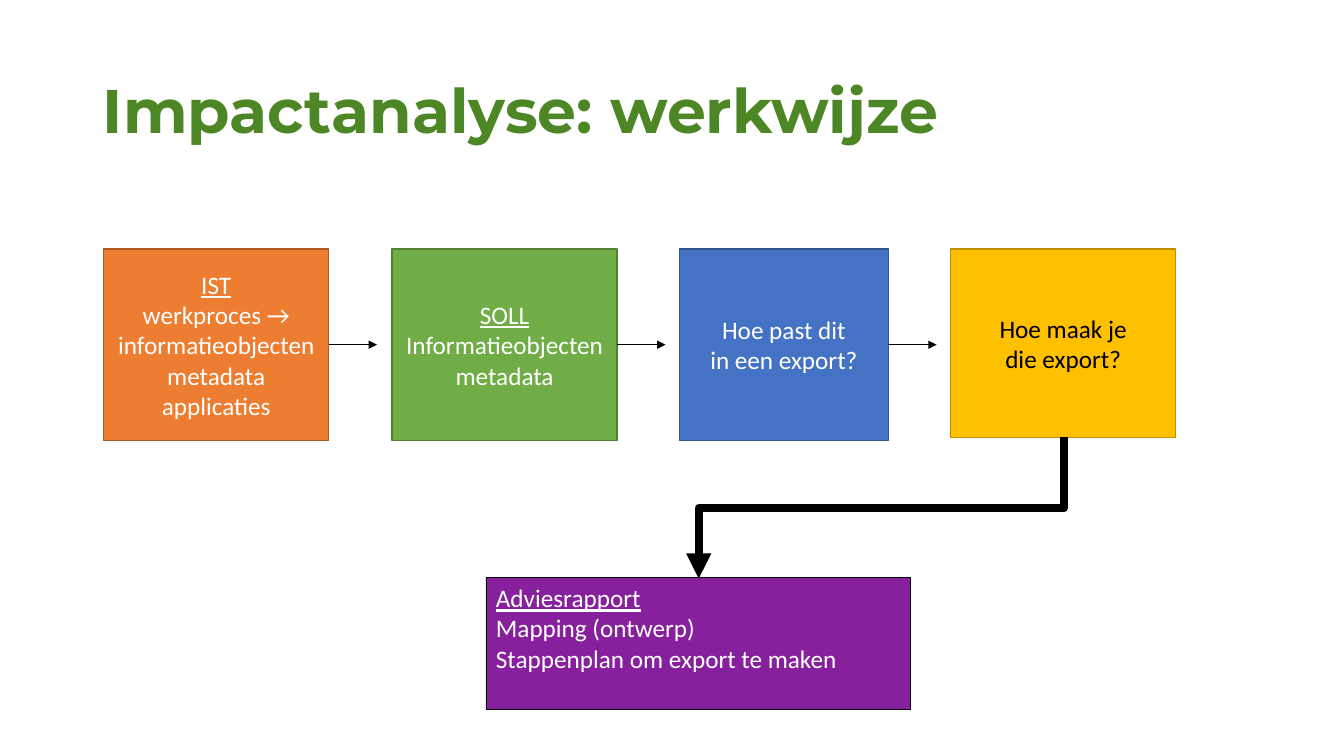
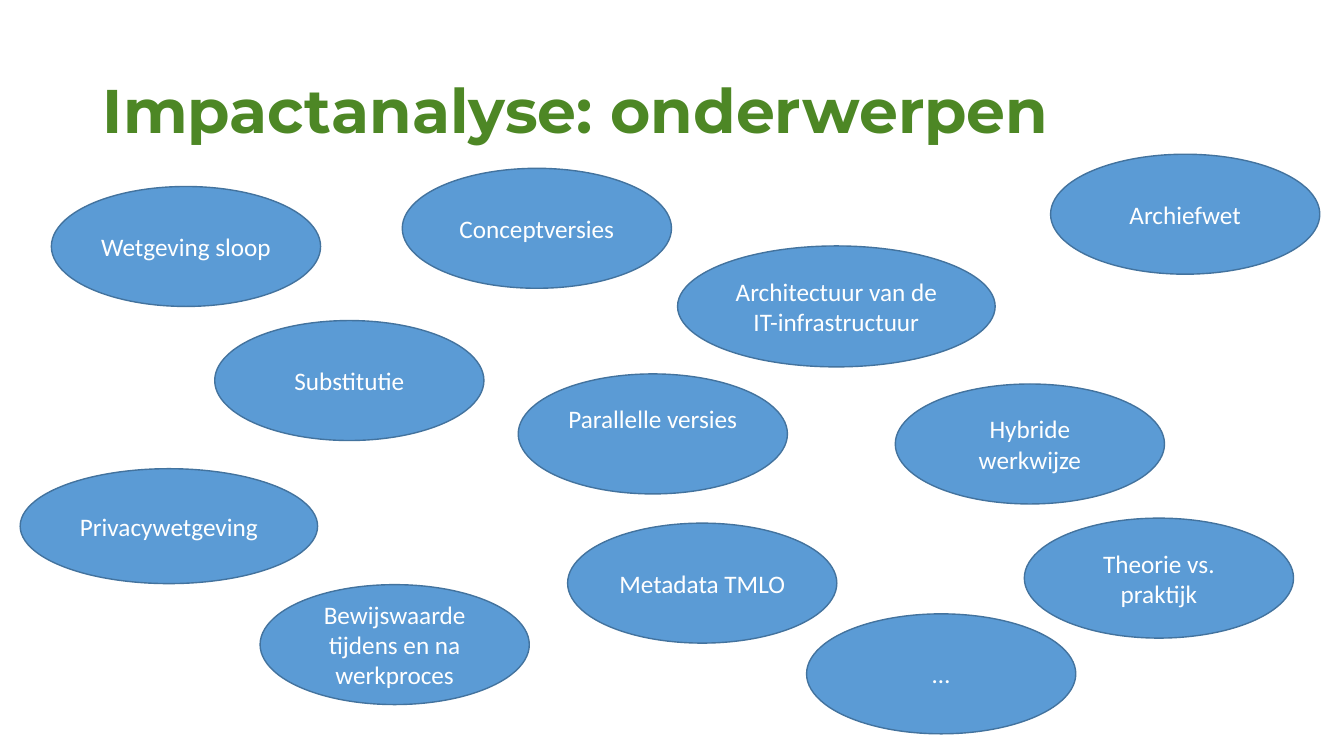
import pptx
import pptx.dml.color
import pptx.enum.shapes
import pptx.enum.text
import pptx.oxml
import pptx.oxml.ns
import pptx.util

Inches = pptx.util.Inches
Pt = pptx.util.Pt
RGBColor = pptx.dml.color.RGBColor
SHAPE = pptx.enum.shapes.MSO_SHAPE
CONNECTOR = pptx.enum.shapes.MSO_CONNECTOR
ANCHOR = pptx.enum.text.MSO_ANCHOR
ALIGN = pptx.enum.text.PP_ALIGN

WHITE = RGBColor(0xFF, 0xFF, 0xFF)
BLACK = RGBColor(0x00, 0x00, 0x00)
TITLE_GREEN = RGBColor(0x4D, 0x87, 0x25)
ORANGE = RGBColor(0xED, 0x7D, 0x31)
ORANGE_EDGE = RGBColor(0xAF, 0x5C, 0x24)
GREEN = RGBColor(0x70, 0xAD, 0x47)
GREEN_EDGE = RGBColor(0x53, 0x80, 0x35)
BLUE = RGBColor(0x44, 0x72, 0xC4)
BLUE_EDGE = RGBColor(0x32, 0x54, 0x91)
YELLOW = RGBColor(0xFF, 0xC0, 0x00)
YELLOW_EDGE = RGBColor(0xBD, 0x8E, 0x00)
PURPLE = RGBColor(0x87, 0x20, 0x9C)
TOPIC_BLUE = RGBColor(0x5B, 0x9B, 0xD5)
TOPIC_EDGE = RGBColor(0x43, 0x73, 0x9E)


def write_text(shape, lines, font="Calibri", size=18, color=WHITE, bold=False,
               align=ALIGN.CENTER, anchor=ANCHOR.MIDDLE, spacing=1.0,
               underline_first=False):
    frame = shape.text_frame
    frame.word_wrap = True
    frame.auto_size = pptx.enum.text.MSO_AUTO_SIZE.NONE
    frame.vertical_anchor = anchor
    frame.text = "\n".join(lines)
    for index, paragraph in enumerate(frame.paragraphs):
        paragraph.alignment = align
        paragraph.line_spacing = spacing
        run_font = paragraph.runs[0].font
        run_font.name = font
        run_font.size = Pt(size)
        run_font.bold = bold
        run_font.color.rgb = color
        if underline_first and index == 0:
            run_font.underline = True


def add_filled_shape(slide, kind, left, top, width, height, fill, edge, edge_width=1):
    shape = slide.shapes.add_shape(
        kind, Inches(left), Inches(top), Inches(width), Inches(height))
    shape.shadow.inherit = False
    shape.fill.solid()
    shape.fill.fore_color.rgb = fill
    shape.line.color.rgb = edge
    shape.line.width = Pt(edge_width)
    return shape


presentation = pptx.Presentation()
presentation.slide_width = Inches(13.33)
presentation.slide_height = Inches(7.5)

# Slides with their shared title style
slides = []
for title_text in ("Impactanalyse: werkwijze", "Impactanalyse: onderwerpen"):
    slide = presentation.slides.add_slide(presentation.slide_layouts[5])
    title = slide.shapes.title
    title.left, title.top = Inches(0.92), Inches(0.4)
    title.width, title.height = Inches(11.5), Inches(1.45)
    write_text(title, [title_text], font="Montserrat", size=44, color=TITLE_GREEN,
               bold=True, align=ALIGN.LEFT, spacing=0.9)
    slides.append(slide)
method_slide, topics_slide = slides

# Method: four steps in a row
steps = [
    (1.03, 2.23, 1.9, ORANGE, ORANGE_EDGE, WHITE, True,
     ["IST", "werkproces → informatieobjecten metadata applicaties"]),
    (3.89, 2.23, 1.9, GREEN, GREEN_EDGE, WHITE, True,
     ["SOLL", "Informatieobjecten", "metadata"]),
    (6.74, 2.07, 1.9, BLUE, BLUE_EDGE, WHITE, False,
     ["Hoe past dit", "in een export?"]),
    (9.43, 2.23, 1.87, YELLOW, YELLOW_EDGE, BLACK, False,
     ["Hoe maak je", "die export?"]),
]
step_boxes = []
for left, width, height, fill, edge, color, underlined, lines in steps:
    box = add_filled_shape(method_slide, SHAPE.RECTANGLE, left, 2.47, width, height,
                           fill, edge)
    write_text(box, lines, color=color, underline_first=underlined)
    step_boxes.append(box)

# Method: advice report
report = add_filled_shape(method_slide, SHAPE.RECTANGLE, 4.82, 5.73, 4.21, 1.31,
                          PURPLE, BLACK, edge_width=0.5)
write_text(report,
           ["Adviesrapport", "Mapping (ontwerp)", "Stappenplan om export te maken"],
           align=ALIGN.LEFT, anchor=ANCHOR.TOP, underline_first=True)

# Method: short arrows after the first three steps
arrows = []
for box in step_boxes[:3]:
    start, middle = box.left + box.width, box.top + box.height // 2
    arrow = method_slide.shapes.add_connector(
        CONNECTOR.STRAIGHT, start, middle, start + Inches(0.48), middle)
    arrow.begin_connect(box, 3)
    arrows.append((arrow, 0.5))

# Method: elbow from the last step down to the report, turned a quarter
elbow = method_slide.shapes.add_connector(
    CONNECTOR.ELBOW, Inches(8.04), Inches(3.23), Inches(9.44), Inches(6.85))
elbow._element.spPr.find(pptx.oxml.ns.qn("a:xfrm")).set("rot", "5400000")
arrows.append((elbow, 6))

for arrow, width in arrows:
    arrow.line.color.rgb = BLACK
    arrow.line.width = Pt(width)
    line = arrow.line._get_or_add_ln()
    line.append(pptx.oxml.parse_xml(
        '<a:tailEnd %s type="triangle"/>' % pptx.oxml.ns.nsdecls("a")))
    arrow._element.spPr.append(pptx.oxml.parse_xml(
        "<a:effectLst %s/>" % pptx.oxml.ns.nsdecls("a")))

# Topics: scattered ellipses, most of one size
TOPIC_SIZE = (2.67, 1.19)
topics = [
    ("Metadata TMLO", 5.63, 5.19, TOPIC_SIZE),
    ("Conceptversies", 3.99, 1.67, TOPIC_SIZE),
    ("Parallelle versies", 5.14, 3.71, TOPIC_SIZE),
    ("Privacywetgeving", 0.2, 4.65, (2.95, 1.14)),
    ("Architectuur van de IT-infrastructuur", 6.72, 2.44, (3.15, 1.2)),
    ("Substitutie", 2.13, 3.18, TOPIC_SIZE),
    ("Hybride werkwijze", 8.88, 3.81, TOPIC_SIZE),
    ("Archiefwet", 10.42, 1.53, TOPIC_SIZE),
    ("Wetgeving sloop", 0.51, 1.85, TOPIC_SIZE),
    ("Bewijswaarde tijdens en na werkproces", 2.58, 5.8, TOPIC_SIZE),
    ("Theorie vs. praktijk", 10.16, 5.14, TOPIC_SIZE),
    ("…", 8, 6.09, TOPIC_SIZE),
]
for text, left, top, (width, height) in topics:
    ellipse = add_filled_shape(topics_slide, SHAPE.OVAL, left, top, width, height,
                               TOPIC_BLUE, TOPIC_EDGE)
    write_text(ellipse, [text])
    if text == "Parallelle versies":
        # This label sits half a line above the middle
        ellipse.text_frame.margin_bottom = Inches(0.35)

presentation.save("out.pptx")
